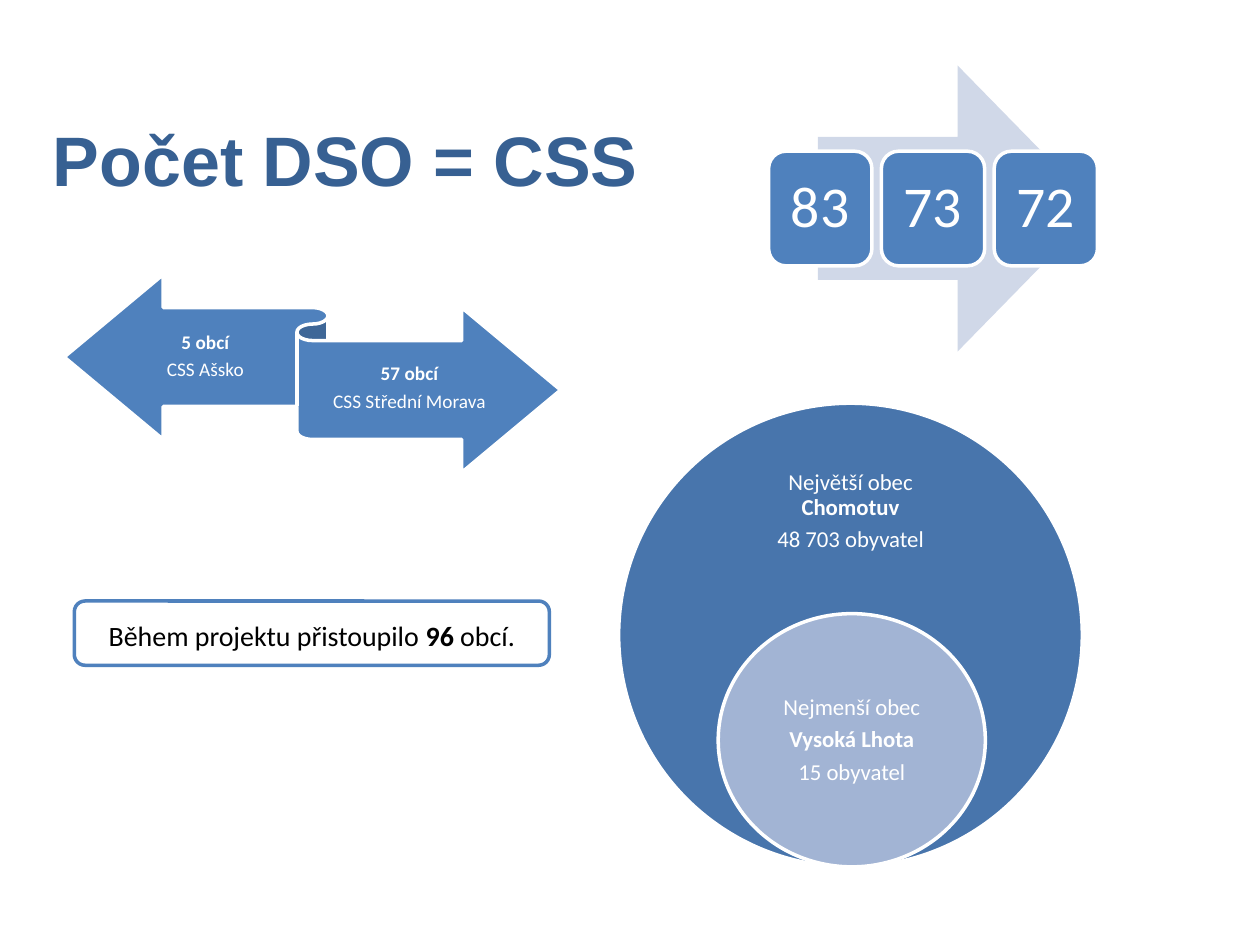
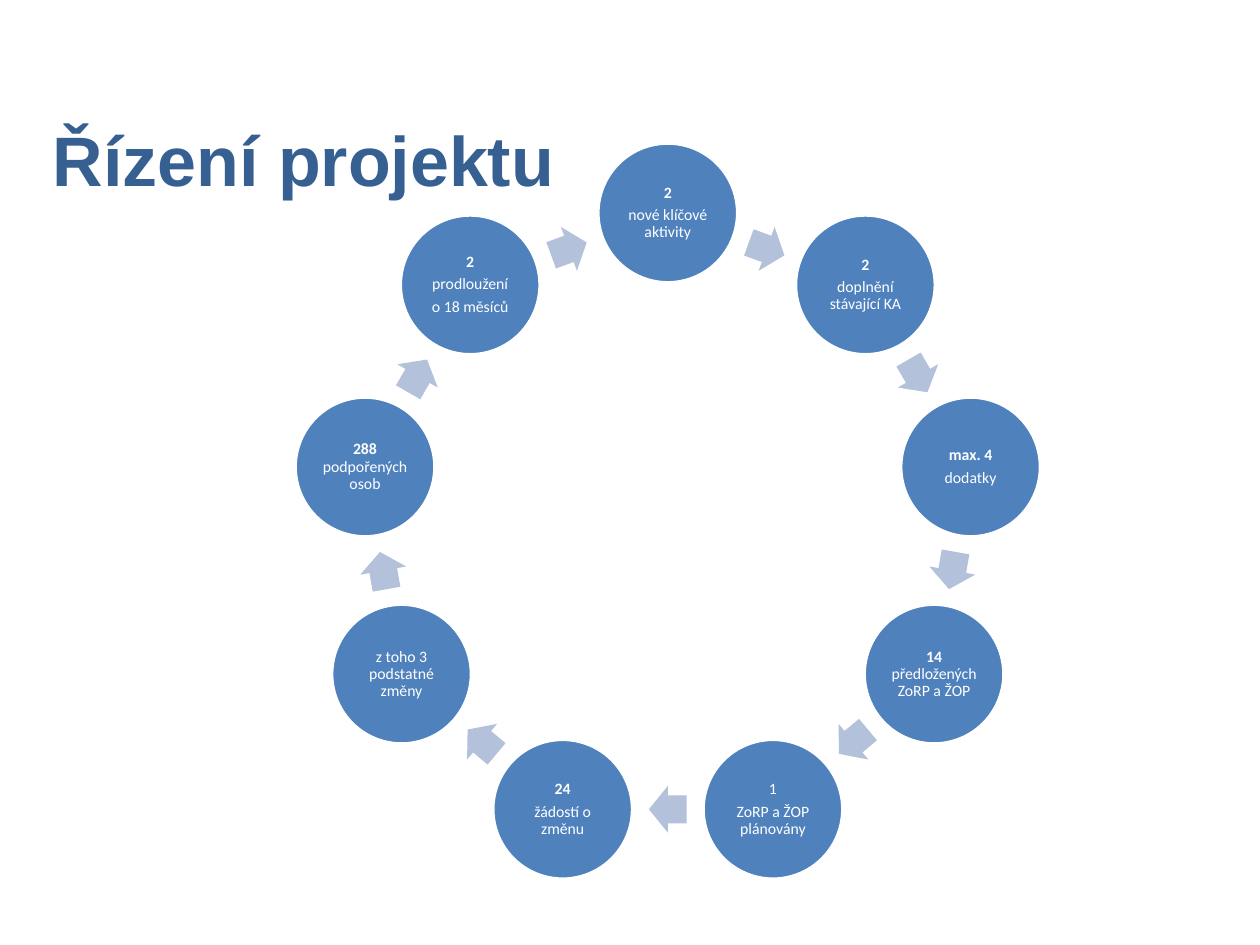
from dataclasses import dataclass
from math import cos, radians, sin

from pptx import Presentation
from pptx.dml.color import RGBColor
from pptx.enum import shapes, text
from pptx.util import Inches, Pt

SHAPE = shapes.MSO_SHAPE
ANCHOR = text.MSO_ANCHOR


@dataclass(frozen=True)
class Theme:
    title: str = "376092"
    blue: str = "4F81BD"
    deep: str = "4875AC"
    soft: str = "A2B4D4"
    pale: str = "D0D8E8"
    ring_arrow: str = "B3C1DB"
    white: str = "FFFFFF"
    black: str = "000000"
    title_font: str = "Arial"
    body_font: str = "Calibri"
    title_size: int = 40
    count_size: int = 33
    note_size: int = 16
    town_size: int = 13
    ribbon_size: int = 11
    ring_size: int = 9
    outline: int = 2


T = Theme()

# Text between asterisks is bold; each list item is a paragraph.
COUNT_TITLE = "Počet DSO = CSS"
COUNTS = ["83", "73", "72"]
RIBBON_ENDS = [
    ((0.98, 2.45, 1.3, 0.77), ["*5 obcí*", "CSS Ašsko"]),
    ((2.36, 2.7, 1.78, 0.77), ["*57 obcí*", "CSS Střední Morava"]),
]
LARGEST = ["Největší obec *Chomotuv*", "48 703 obyvatel"]
SMALLEST = ["Nejmenší obec", "*Vysoká Lhota*", "15 obyvatel"]
NOTE = ["Během projektu přistoupilo *96* obcí."]

RING_TITLE = "Řízení projektu"
RING = [
    ["*2*", "nové klíčové aktivity"],
    ["*2*", "doplnění stávající KA"],
    ["*max. 4*", "dodatky"],
    ["*14* předložených ZoRP a ŽOP"],
    ["1", "ZoRP a ŽOP plánovány"],
    ["*24*", "žádostí o změnu"],
    ["z toho 3 podstatné změny"],
    ["*288* podpořených osob"],
    ["*2*", "prodloužení", "o 18 měsíců"],
]


def rgb(color):
    return RGBColor.from_string(color)


def place(box):
    return [Inches(v) for v in box]


def set_font(r, size, color, bold=False, name=T.body_font):
    values = {"size": Pt(size), "bold": bold, "name": name}
    for key, value in values.items():
        setattr(r.font, key, value)
    r.font.color.rgb = rgb(color)


def write(sp, lines, size, color=T.white, insets=(0.01,) * 4,
          anchor=ANCHOR.MIDDLE, spacing=0.9, after=None, wrap=True):
    """Fill a shape with centred paragraphs; insets run left, top, right, bottom."""
    tf = sp.text_frame
    tf.word_wrap = wrap
    tf.vertical_anchor = anchor
    for side, value in zip(("left", "top", "right", "bottom"), insets):
        setattr(tf, f"margin_{side}", Inches(value))
    for i, line in enumerate(lines):
        p = tf.add_paragraph() if i else tf.paragraphs[0]
        p.alignment = text.PP_ALIGN.CENTER
        p.line_spacing = spacing
        p.space_after = Pt(0.35 * size if after is None else after)
        for j, part in enumerate(line.split("*")):
            if part:
                r = p.add_run()
                r.text = part
                set_font(r, size, color, bold=j % 2 == 1)


def add_shape(s, kind, box, fill, line=T.white):
    sp = s.shapes.add_shape(kind, *place(box))
    sp.shadow.inherit = False
    sp.fill.solid()
    sp.fill.fore_color.rgb = rgb(fill)
    if line:
        sp.line.color.rgb = rgb(line)
        sp.line.width = Pt(T.outline)
    else:
        sp.line.fill.background()
    return sp


def add_slide(prs, title, width):
    s = prs.slides.add_slide(prs.slide_layouts.get_by_name("Title Only"))
    sp = s.shapes.title
    sp.left, sp.top, sp.width, sp.height = place((0.32, 0.9, width, 0.71))
    tf = sp.text_frame
    tf.vertical_anchor = ANCHOR.MIDDLE
    tf.auto_size = text.MSO_AUTO_SIZE.NONE
    p = tf.paragraphs[0]
    p.alignment = text.PP_ALIGN.LEFT
    r = p.add_run()
    r.text = title
    set_font(r, T.title_size, T.title, True, T.title_font)
    return s


def build_counts(prs):
    s = add_slide(prs, COUNT_TITLE, 8.28)

    add_shape(s, SHAPE.LEFT_RIGHT_RIBBON, (0.51, 2.18, 3.94, 1.57), T.blue)
    for box, lines in RIBBON_ENDS:
        label = s.shapes.add_textbox(*place(box))
        write(label, lines, T.ribbon_size, insets=(0, 0.04, 0, 0.05))

    add_shape(s, SHAPE.RIGHT_ARROW, (6.49, 0.52, 2.22, 2.27), T.pale, None)
    for i, count in enumerate(COUNTS):
        tile = add_shape(s, SHAPE.ROUNDED_RECTANGLE,
                         (6.1 + i * 0.895, 1.2, 0.82, 0.91), T.blue)
        write(tile, [count], T.count_size, wrap=False)

    largest = add_shape(s, SHAPE.OVAL, (4.91, 3.2, 3.68, 3.68), T.deep)
    write(largest, LARGEST, T.town_size, insets=(0.45, 0, 0.45, 0),
          anchor=ANCHOR.TOP)
    smallest = add_shape(s, SHAPE.OVAL, (5.7, 4.87, 2.12, 2.01), T.soft)
    write(smallest, SMALLEST, T.town_size, insets=(0.1,) * 4)

    note = add_shape(s, SHAPE.ROUNDED_RECTANGLE, (0.59, 4.77, 3.77, 0.51),
                     T.white, T.blue)
    write(note, NOTE, T.note_size, T.black, (0.1, 0.05, 0.1, 0.05),
          spacing=1.15, after=10)


def build_ring(prs):
    s = add_slide(prs, RING_TITLE, 9.24)
    center_x, center_y, radius = 5.3, 4.13, 2.44
    disc, arrow_w, arrow_h = 1.11, 0.3, 0.37
    step = 360 / len(RING)

    def around(angle, distance, w, h):
        """Box of size w by h centred on the ring, clockwise from the top."""
        a = radians(angle)
        return (center_x + distance * sin(a) - w / 2,
                center_y - distance * cos(a) - h / 2, w, h)

    for i, lines in enumerate(RING):
        circle = add_shape(s, SHAPE.OVAL,
                           around(i * step, radius, disc, disc), T.blue)
        write(circle, lines, T.ring_size)
        angle = (i + 0.5) * step
        chord = radius * cos(radians(step / 2))
        arrow = add_shape(s, SHAPE.RIGHT_ARROW,
                          around(angle, chord, arrow_w, arrow_h),
                          T.ring_arrow, None)
        arrow.rotation = angle
        arrow.adjustments[0] = 0.6
        arrow.adjustments[1] = 0.5


def main():
    prs = Presentation()
    prs.slide_width, prs.slide_height = Inches(10), Inches(7.5)
    build_counts(prs)
    build_ring(prs)
    prs.save("out.pptx")


if __name__ == "__main__":
    main()
